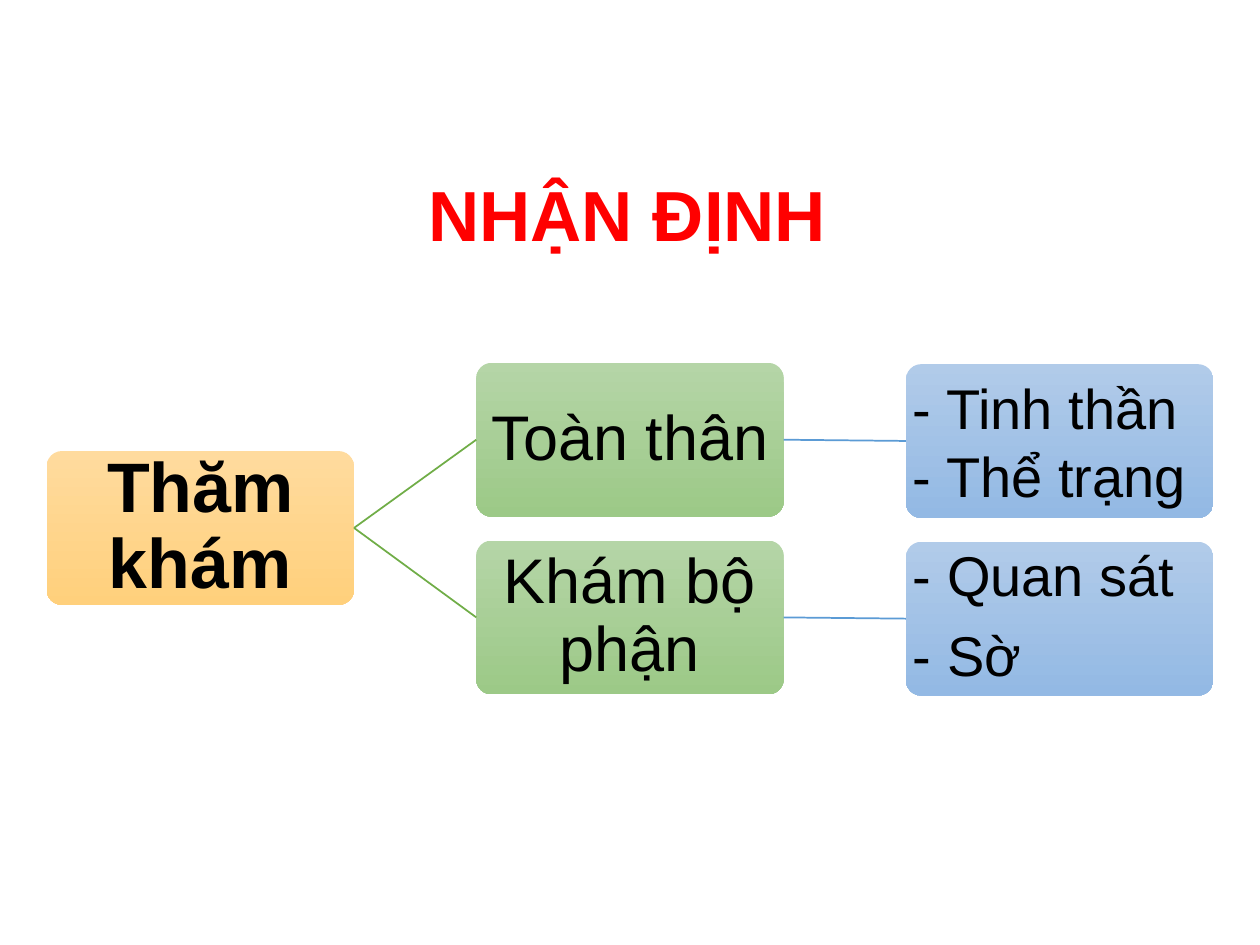
from pptx import Presentation
from pptx.dml.color import RGBColor
from pptx.enum.shapes import MSO_CONNECTOR, MSO_SHAPE
from pptx.enum.text import MSO_ANCHOR, PP_ALIGN
from pptx.oxml.ns import qn
from pptx.util import Inches, Pt
from lxml.etree import SubElement

RED = RGBColor(0xFF, 0x00, 0x00)
BLACK = RGBColor(0x00, 0x00, 0x00)
GREEN_LINE = RGBColor(0x70, 0xAD, 0x47)
BLUE_LINE = RGBColor(0x5B, 0x9B, 0xD5)
ORANGE = (RGBColor(0xFF, 0xDB, 0x9E), RGBColor(0xFF, 0xD0, 0x7C))
GREEN = (RGBColor(0xB5, 0xD5, 0xA7), RGBColor(0x9C, 0xC9, 0x87))
BLUE = (RGBColor(0xB1, 0xCB, 0xE9), RGBColor(0x93, 0xB9, 0xE4))

NODE_WIDTH, NODE_HEIGHT = 2.44, 1.22
ROOT_LEFT, BRANCH_LEFT, DETAIL_LEFT = 0.37, 3.78, 7.19
ROOT_TOP, FIRST_TOP, ROW_STEP = 3.58, 2.88, 1.41


class TreeSlide:
    font = "Arial"

    def __init__(self, page):
        self.page = page

    def label(self, box, text, size, color=BLACK, bold=False,
              align=PP_ALIGN.CENTER, spacing=0.9, after=0, margin=0.03):
        frame = box.text_frame
        frame.text = text
        frame.word_wrap = True
        frame.vertical_anchor = MSO_ANCHOR.MIDDLE
        frame.margin_left = frame.margin_right = Inches(margin)
        frame.margin_top = frame.margin_bottom = Inches(margin)
        for para in frame.paragraphs:
            para.alignment = align
            para.line_spacing = spacing
            para.space_after = Pt(after)
            for span in para.runs:
                span.font.name = self.font
                span.font.size = Pt(size)
                span.font.bold = bold
                span.font.color.rgb = color

    def title(self, text):
        box = self.page.shapes.add_textbox(
            Inches(0.67), Inches(1.3), Inches(8.62), Inches(0.87))
        self.label(box, text, 40.5, RED, bold=True)

    def node(self, left, top, colors, text, size, **style):
        box = self.page.shapes.add_shape(
            MSO_SHAPE.ROUNDED_RECTANGLE, Inches(left), Inches(top),
            Inches(NODE_WIDTH), Inches(NODE_HEIGHT))
        box.adjustments[0] = 0.1
        box.shadow.inherit = False
        box.line.fill.background()
        box.fill.gradient()
        box.fill.gradient_angle = 270
        for stop, color in zip(box.fill.gradient_stops, colors):
            stop.color.rgb = color
        self.label(box, text, size, **style)
        return box

    def link(self, start, end, color):
        line = self.page.shapes.add_connector(MSO_CONNECTOR.STRAIGHT, 0, 0, 0, 0)
        line.begin_connect(start, 3)
        line.end_connect(end, 1)
        line.line.color.rgb = color
        line.line.width = Pt(1)
        SubElement(line._element.spPr, qn("a:effectLst"))


def main():
    deck = Presentation()
    deck.slide_width, deck.slide_height = Inches(10), Inches(7.5)
    tree = TreeSlide(deck.slides.add_slide(deck.slide_layouts[6]))
    tree.title("NHẬN ĐỊNH")
    root = tree.node(ROOT_LEFT, ROOT_TOP, ORANGE, "Thăm khám", 40, bold=True)
    rows = [
        ("Toàn thân", "- Tinh thần\n- Thể trạng", 1, 0),
        ("Khám bộ phận", "- Quan sát\n- Sờ", 0.9, 11.2),
    ]
    for index, (branch_text, detail_text, spacing, after) in enumerate(rows):
        top = FIRST_TOP + index * ROW_STEP
        branch = tree.node(BRANCH_LEFT, top, GREEN, branch_text, 36)
        detail = tree.node(DETAIL_LEFT, top + 0.01, BLUE, detail_text, 32,
                           align=PP_ALIGN.LEFT, spacing=spacing,
                           after=after, margin=0.02)
        tree.link(root, branch, GREEN_LINE)
        tree.link(branch, detail, BLUE_LINE)
    deck.save("out.pptx")


if __name__ == "__main__":
    main()
